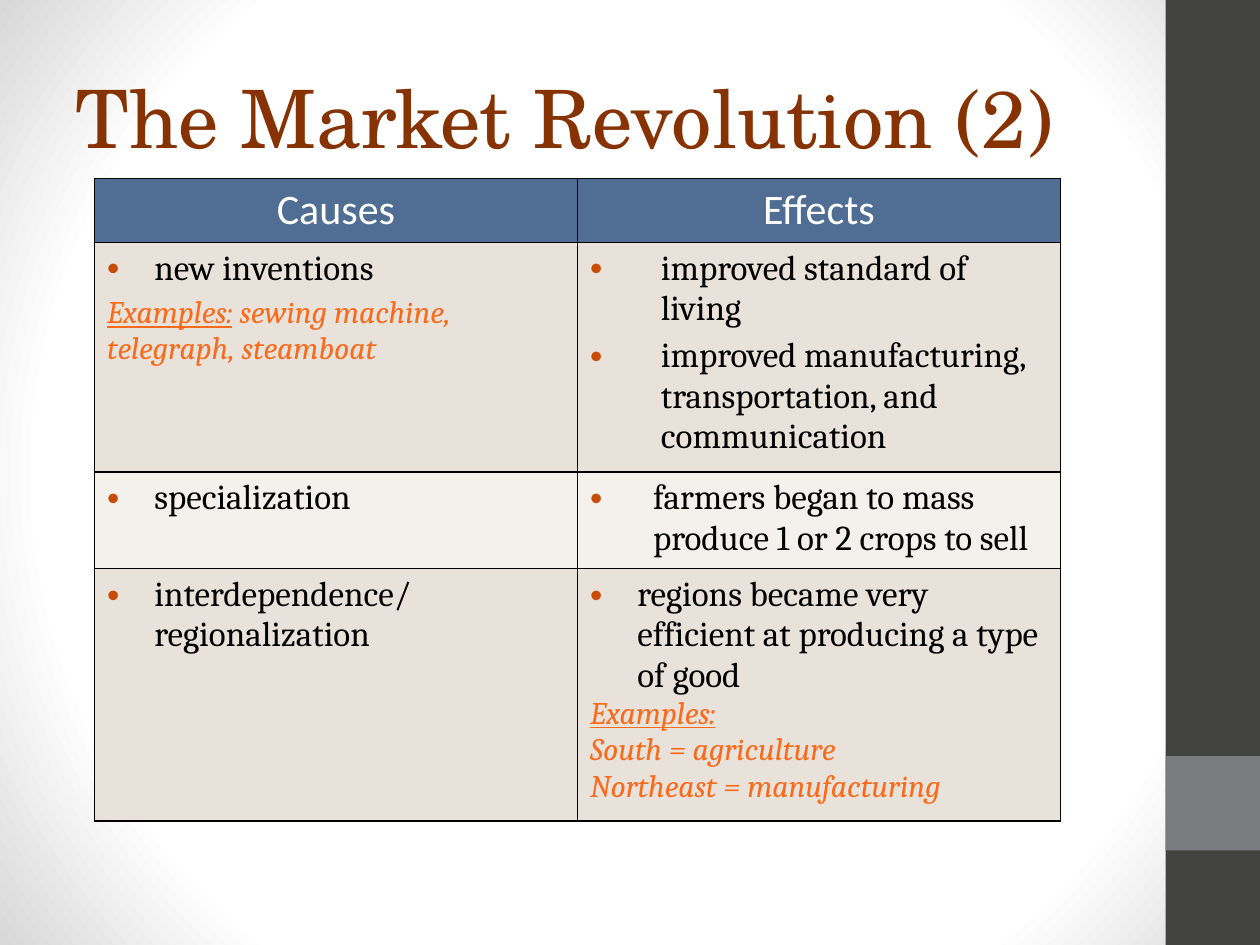
import pptx
import pptx.dml.color
import pptx.enum.shapes
import pptx.enum.text
import pptx.oxml
import pptx.util
from dataclasses import dataclass

Pt = pptx.util.Pt
RGB = pptx.dml.color.RGBColor.from_string
ALIGN = pptx.enum.text.PP_ALIGN
NS = 'xmlns:a="http://schemas.openxmlformats.org/drawingml/2006/main"'
NS_P = 'xmlns:p="http://schemas.openxmlformats.org/presentationml/2006/main"'


@dataclass(frozen=True)
class Theme:
    title: str = "863203"
    header: str = "506E94"
    band_dark: str = "E9E2DA"
    band_light: str = "F4F1ED"
    bullet: str = "C94B05"
    example: str = "F96A1B"
    text: str = "000000"
    white: str = "FFFFFF"
    vignette: str = "D8D8D8"
    sidebar: str = "434342"
    accent: str = "797B7E"
    title_font: str = "TeX Gyre Schola"
    head_font: str = "Calibri"
    body_font: str = "Cambria"
    title_size: int = 46
    head_size: int = 24
    body_size: int = 20
    example_size: int = 18


T = Theme()


def point(text, indent=27, before=0):
    return dict(runs=[(text, {})], indent=indent, before=before)


def example(*runs, before=0):
    style = dict(size=T.example_size, color=T.example, italic=True)
    return dict(runs=[(text, dict(style, underline=line)) for text, line in runs], before=before)


ROWS = [
    (126, T.band_dark,
     [point("new inventions"),
      example(("Examples:", True), (" sewing machine, telegraph, steamboat", False), before=3.6)],
     [point("improved standard of living", 40.5),
      point("improved manufacturing, transportation, and communication", 40.5, 4)]),
    (53.5, T.band_light,
     [point("specialization")],
     [point("farmers began to mass produce 1 or 2 crops to sell", 36)]),
    (138, T.band_dark,
     [point("interdependence/ regionalization")],
     [point("regions became very efficient at producing a type of good"),
      example(("Examples:", True)),
      example(("South = agriculture", False)),
      example(("Northeast = manufacturing", False))]),
]


def add_text(p, text, font=T.body_font, size=T.body_size, color=T.text,
             italic=False, underline=False):
    r = p.add_run()
    r.text = text
    r.font.name = font
    r.font.size = Pt(size)
    r.font.color.rgb = RGB(color)
    r.font.bold = False
    r.font.italic = italic
    r.font.underline = underline


def add_bullet(p, indent):
    pPr = p._p.get_or_add_pPr()
    pPr.set("marL", str(Pt(indent)))
    pPr.set("indent", str(-Pt(indent)))
    for xml in (f'<a:buClr {NS}><a:srgbClr val="{T.bullet}"/></a:buClr>',
                f'<a:buFont {NS} typeface="Arial"/>',
                f'<a:buChar {NS} char="•"/>'):
        pPr.append(pptx.oxml.parse_xml(xml))


def style_cell(cell, fill):
    cell.fill.solid()
    cell.fill.fore_color.rgb = RGB(fill)
    tcPr = cell._tc.get_or_add_tcPr()
    for i, side in enumerate("LRTB"):
        tcPr.insert(i, pptx.oxml.parse_xml(
            f'<a:ln{side} {NS} w="{Pt(1)}"><a:solidFill>'
            f'<a:srgbClr val="{T.text}"/></a:solidFill></a:ln{side}>'))


def fill_cell(cell, paragraphs):
    tf = cell.text_frame
    for i, item in enumerate(paragraphs):
        p = tf.add_paragraph() if i else tf.paragraphs[0]
        p.space_before = Pt(item["before"])
        if "indent" in item:
            add_bullet(p, item["indent"])
        for text, style in item["runs"]:
            add_text(p, text, **style)


def add_background(s):
    stops = "".join(f'<a:gs pos="{pos * 1000}"><a:srgbClr val="{color}"/></a:gs>'
                    for pos, color in ((0, T.white), (75, T.white), (100, T.vignette)))
    s._element.cSld.insert(0, pptx.oxml.parse_xml(
        f'<p:bg {NS_P} {NS}><p:bgPr><a:gradFill rotWithShape="1"><a:gsLst>{stops}</a:gsLst>'
        '<a:path path="circle"><a:fillToRect l="50000" t="50000" r="50000" b="50000"/></a:path>'
        '</a:gradFill><a:effectLst/></p:bgPr></p:bg>'))


def add_sidebar(s, x, y, w, h):
    for top, height, color in ((y, h, T.sidebar), (y + h * 0.8, h * 0.1, T.accent)):
        sp = s.shapes.add_shape(pptx.enum.shapes.MSO_SHAPE.RECTANGLE,
                                Pt(x), Pt(top), Pt(w), Pt(height))
        sp.shadow.inherit = False
        sp.fill.solid()
        sp.fill.fore_color.rgb = RGB(color)
        sp.line.fill.background()


def add_title(s, text, x, y, w, h):
    tf = s.shapes.add_textbox(Pt(x), Pt(y), Pt(w), Pt(h)).text_frame
    tf.word_wrap = True
    tf.vertical_anchor = pptx.enum.text.MSO_ANCHOR.MIDDLE
    add_text(tf.paragraphs[0], text, font=T.title_font, size=T.title_size, color=T.title)


def add_causes_table(s, x, y, w, head_h):
    heights = [head_h] + [row[0] for row in ROWS]
    table = s.shapes.add_table(len(heights), 2, Pt(x), Pt(y), Pt(w), Pt(sum(heights))).table
    table.horz_banding = False
    table.first_row = False
    for col in table.columns:
        col.width = Pt(w / 2)
    for row, height in zip(table.rows, heights):
        row.height = Pt(height)
    for cell, text in zip(table.rows[0].cells, ("Causes", "Effects")):
        style_cell(cell, T.header)
        p = cell.text_frame.paragraphs[0]
        p.alignment = ALIGN.CENTER
        add_text(p, text, font=T.head_font, size=T.head_size, color=T.white)
    for r, (_, fill, *columns) in enumerate(ROWS, 1):
        for c, paragraphs in enumerate(columns):
            style_cell(table.cell(r, c), fill)
            fill_cell(table.cell(r, c), paragraphs)


def main():
    prs = pptx.Presentation()
    prs.slide_width, prs.slide_height = Pt(720), Pt(540)
    s = prs.slides.add_slide(prs.slide_layouts[6])
    add_background(s)
    add_sidebar(s, 666, 0, 54, 540)
    add_title(s, "The Market Revolution (2)", 36, 21.6, 600, 90)
    add_causes_table(s, 54, 102, 552, 36.5)
    prs.save("out.pptx")


if __name__ == "__main__":
    main()
